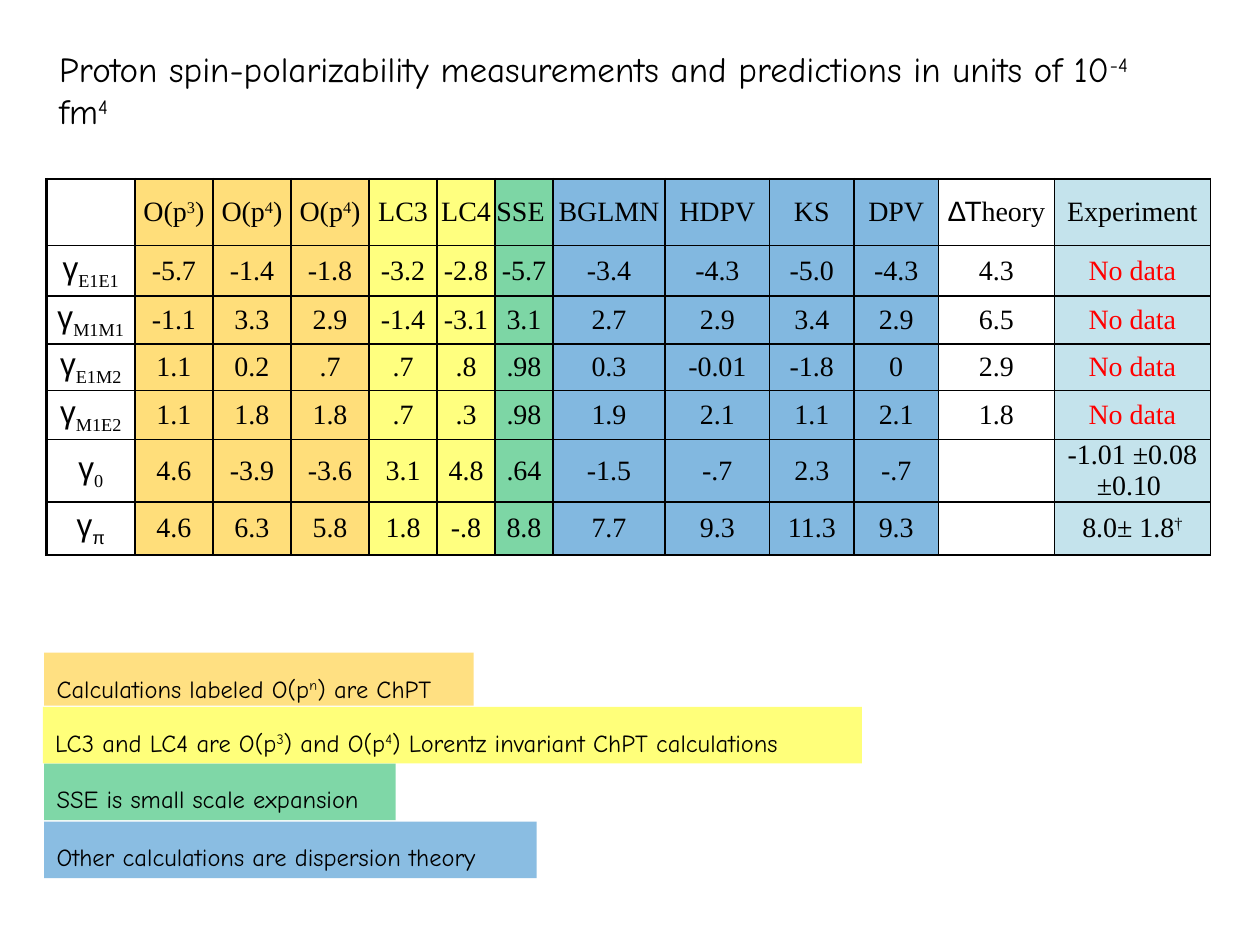
from dataclasses import dataclass
from itertools import groupby

from lxml.etree import SubElement
from pptx import Presentation
from pptx.dml.color import RGBColor
from pptx.enum.shapes import MSO_SHAPE
from pptx.enum.text import MSO_ANCHOR, MSO_AUTO_SIZE, PP_ALIGN
from pptx.oxml import parse_xml
from pptx.oxml.ns import nsdecls, qn
from pptx.util import Inches, Pt


@dataclass(frozen=True)
class Theme:
    ink: str = "000000"
    alert: str = "FF0000"
    orange: str = "FFC000"
    yellow: str = "FFFF00"
    green: str = "00B050"
    blue: str = "0070C0"
    aqua: str = "93CDDD"
    heading_font: str = "Comic Neue"
    table_font: str = "Times New Roman"
    greek_font: str = "Arial"
    title_size: int = 20
    symbol_size: int = 18
    value_size: int = 16
    legend_size: int = 14
    outer_line: float = 1.5
    inner_line: float = 1


THEME = Theme()
SLIDE_WIDTH, SLIDE_HEIGHT = Inches(10), Inches(7.5)
BASELINES = {"^": 30, "_": -25}

COLUMN_WIDTHS = [0.7, 0.62, 0.62, 0.62, 0.54, 0.46, 0.46, 0.89, 0.83, 0.67, 0.67, 0.92, 1.24]
ROW_HEIGHTS = [0.53, 0.4, 0.38, 0.37, 0.39, 0.36, 0.42]
COLUMN_TINTS = (
    [None]
    + [(THEME.orange, 52)] * 3
    + [(THEME.yellow, 50)] * 2
    + [(THEME.green, 51)]
    + [(THEME.blue, 49)] * 4
    + [None, (THEME.aqua, 54)]
)
NO_DATA = "No data"
POLARIZABILITIES = [
    ["", "O(p^3^)", "O(p^4^)", "O(p^4^)", "LC3", "LC4", "SSE ", "BGLMN", "HDPV", "KS", "DPV", "ΔΤheory", "Experiment"],
    ["γ_E1E1_", "-5.7", "-1.4", "-1.8", "-3.2", "-2.8", "-5.7", "-3.4", "-4.3", "-5.0", "-4.3", "4.3", NO_DATA],
    ["γ_M1M1_", "-1.1", "3.3", "2.9", "-1.4", "-3.1", "3.1", "2.7", "2.9", "3.4", "2.9", "6.5", NO_DATA],
    ["γ_E1M2_", "1.1", "0.2", ".7", ".7", ".8", ".98", "0.3", "-0.01", "-1.8", "0", "2.9", NO_DATA],
    ["γ_M1E2_", "1.1", "1.8", "1.8", ".7", ".3", ".98", "1.9", "2.1", "1.1", "2.1", "1.8", NO_DATA],
    ["γ_0_", "4.6", "-3.9", "-3.6", "3.1", "4.8", ".64", "-1.5", "-.7", "2.3", "-.7", "", "-1.01 ±0.08 ±0.10 "],
    ["γ_π_", "4.6", "6.3", "5.8", "1.8", "-.8", "8.8", "7.7", "9.3", "11.3", "9.3", "", "8.0± 1.8^†^"],
]
LEGEND = [
    ("Calculations labeled O(p^n^) are ChPT", THEME.orange, 49, (0.35, 5.18, 3.41, 0.42)),
    ("LC3 and LC4 are O(p^3^) and O(p^4^) Lorentz invariant ChPT calculations", THEME.yellow, 52, (0.34, 5.61, 6.5, 0.45)),
    ("SSE is small scale expansion", THEME.green, 50, (0.35, 6.06, 2.79, 0.45)),
    ("Other calculations are dispersion theory", THEME.blue, 46, (0.35, 6.52, 3.91, 0.45)),
]


def is_greek(letter):
    return "Α" <= letter <= "ω"


def write_marked(paragraph, marked, size, font, color=THEME.ink, greek_font=None):
    mark = "_" if "_" in marked else "^"
    for position, part in enumerate(marked.split(mark)):
        for greek, letters in groupby(part, key=is_greek):
            run = paragraph.add_run()
            run.text = "".join(letters)
            run.font.size = Pt(size)
            run.font.name = greek_font if greek and greek_font else font
            run.font.color.rgb = RGBColor.from_string(color)
            if position % 2:
                run.font._element.set("baseline", str(BASELINES[mark] * 1000))


def tint(fill, properties, color, opacity):
    fill.solid()
    fill.fore_color.rgb = RGBColor.from_string(color)
    swatch = properties.find(qn("a:solidFill")).find(qn("a:srgbClr"))
    SubElement(swatch, qn("a:alpha")).set("val", str(opacity * 1000))


def set_borders(properties, widths):
    for order, (side, width) in enumerate(widths.items()):
        properties.insert(order, parse_xml(
            f'<a:ln{side} {nsdecls("a")} w="{Pt(width)}"><a:solidFill>'
            f'<a:srgbClr val="{THEME.ink}"/></a:solidFill></a:ln{side}>'
        ))


def add_title(slide):
    title = slide.shapes.title
    title.left, title.top = Inches(0.37), Inches(0.33)
    title.width, title.height = Inches(9), Inches(0.77)
    frame = title.text_frame
    frame.word_wrap = True
    frame.auto_size = MSO_AUTO_SIZE.NONE
    frame.vertical_anchor = MSO_ANCHOR.TOP
    frame.paragraphs[0].alignment = PP_ALIGN.LEFT
    write_marked(
        frame.paragraphs[0],
        "Proton spin-polarizability measurements and predictions in units of 10^-4^ fm^4^",
        THEME.title_size, THEME.heading_font,
    )


def fill_cell(cell, content, row, column):
    cell.margin_left = cell.margin_right = cell.margin_top = cell.margin_bottom = 0
    cell.vertical_anchor = MSO_ANCHOR.MIDDLE
    paragraph = cell.text_frame.paragraphs[0]
    paragraph.alignment = PP_ALIGN.CENTER
    write_marked(
        paragraph, content,
        THEME.value_size if column else THEME.symbol_size,
        THEME.table_font,
        THEME.alert if content == NO_DATA else THEME.ink,
        THEME.greek_font,
    )
    properties = cell._tc.get_or_add_tcPr()
    if COLUMN_TINTS[column]:
        tint(cell.fill, properties, *COLUMN_TINTS[column])
    else:
        cell.fill.background()
    set_borders(properties, {
        "L": THEME.inner_line if column else THEME.outer_line,
        "R": THEME.inner_line,
        "T": THEME.inner_line if row else THEME.outer_line,
        "B": THEME.outer_line if row == len(ROW_HEIGHTS) - 1 else THEME.inner_line,
    })


def add_polarizability_table(slide):
    table = slide.shapes.add_table(
        len(ROW_HEIGHTS), len(COLUMN_WIDTHS), Inches(0.37), Inches(1.42),
        Inches(sum(COLUMN_WIDTHS)), Inches(sum(ROW_HEIGHTS)),
    ).table
    table.first_row = table.horz_banding = False
    for column, width in zip(table.columns, COLUMN_WIDTHS):
        column.width = Inches(width)
    for row, height in zip(table.rows, ROW_HEIGHTS):
        row.height = Inches(height)
    for row, contents in enumerate(POLARIZABILITIES):
        for column, content in enumerate(contents):
            fill_cell(table.cell(row, column), content, row, column)


def add_legend_band(slide, label, color, opacity, bounds):
    band = slide.shapes.add_shape(MSO_SHAPE.RECTANGLE, *map(Inches, bounds))
    band.shadow.inherit = False
    band.line.fill.background()
    tint(band.fill, band._element.spPr, color, opacity)
    frame = band.text_frame
    frame.word_wrap = True
    frame.vertical_anchor = MSO_ANCHOR.TOP
    paragraph = frame.paragraphs[0]
    paragraph.alignment = PP_ALIGN.JUSTIFY
    paragraph.line_spacing = 1.5
    write_marked(paragraph, label, THEME.legend_size, THEME.heading_font)


def main():
    presentation = Presentation()
    presentation.slide_width, presentation.slide_height = SLIDE_WIDTH, SLIDE_HEIGHT
    slide = presentation.slides.add_slide(presentation.slide_layouts.get_by_name("Title Only"))
    add_title(slide)
    add_polarizability_table(slide)
    for entry in LEGEND:
        add_legend_band(slide, *entry)
    presentation.save("out.pptx")


if __name__ == "__main__":
    main()
